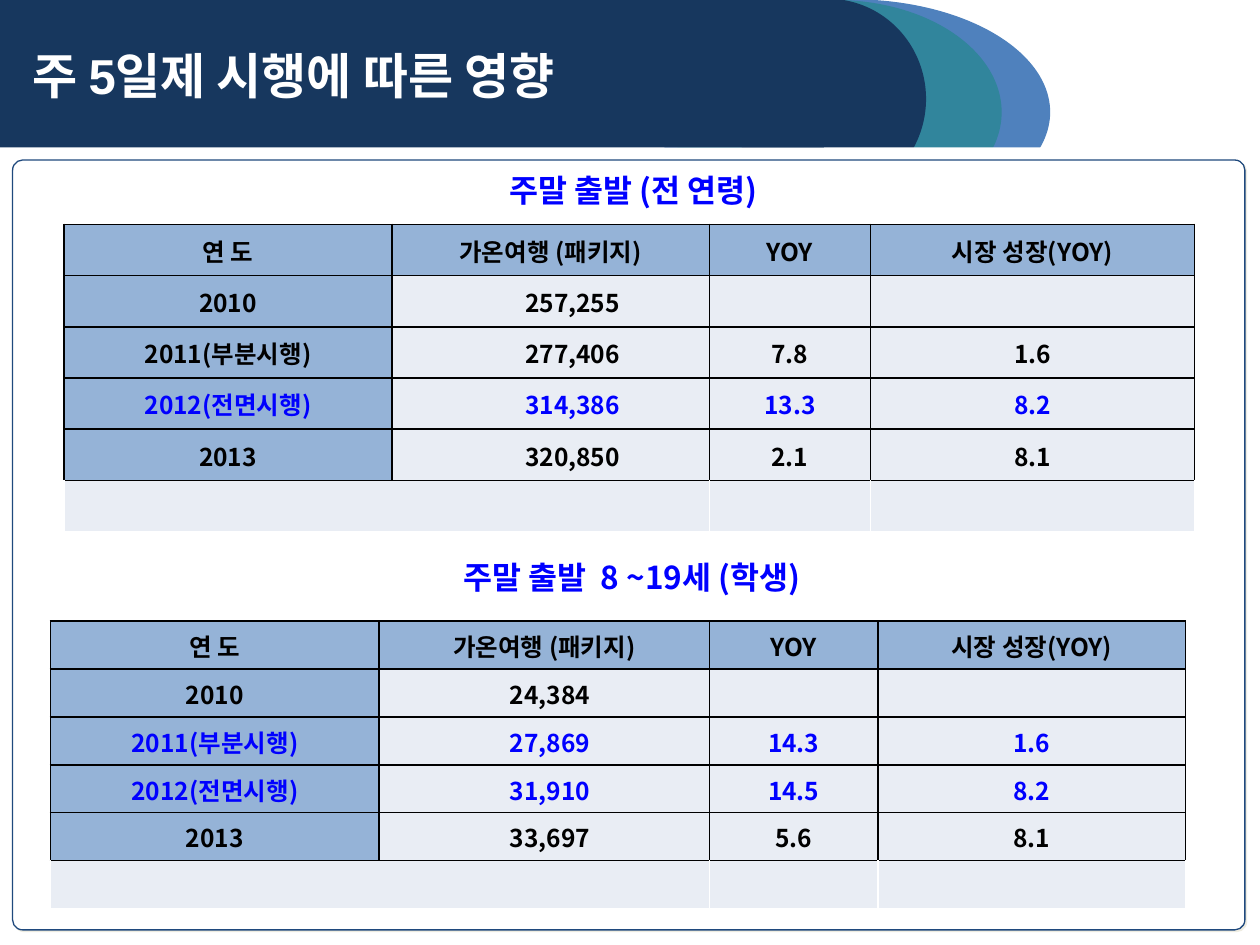
from dataclasses import dataclass

from lxml.etree import SubElement
from pptx import Presentation
from pptx.dml.color import RGBColor as RGB
from pptx.enum.shapes import MSO_SHAPE as Shape
from pptx.enum.text import MSO_ANCHOR as Anchor, PP_ALIGN as Align
from pptx.oxml.ns import qn
from pptx.util import Inches, Pt


@dataclass(frozen=True)
class Theme:
    navy: str = "17375E"
    teal: str = "31859C"
    blue: str = "4F81BD"
    outline: str = "1F497D"
    shade: str = "EEECE1"
    white: str = "FFFFFF"
    black: str = "000000"
    accent: str = "0000FF"
    label_fill: str = "95B3D7"
    value_fill: str = "E9EDF4"
    title_font: str = "Arial"
    body_font: str = "Noto Sans CJK KR"
    title_size: int = 28
    heading_size: int = 18
    table_size: int = 14


class SlideBuilder:
    """Places elements on a grid of 100 columns by 75 rows."""

    COLUMNS, ROWS = 100, 75

    def __init__(self, deck, theme):
        self.theme = theme
        self.unit = deck.slide_width / self.COLUMNS
        self.slide = deck.slides.add_slide(deck.slide_layouts[6])

    def grid(self, *lengths):
        return [round(length * self.unit) for length in lengths]

    def style(self, paragraph, size, color, font, align):
        paragraph.alignment = align
        paragraph.font.size = Pt(size)
        paragraph.font.bold = True
        paragraph.font.name = font
        paragraph.font.color.rgb = RGB.from_string(color)

    def shape(self, kind, area, fill, line=None):
        shape = self.slide.shapes.add_shape(kind, *self.grid(*area))
        shape.shadow.inherit = False
        shape.fill.solid()
        shape.fill.fore_color.rgb = RGB.from_string(fill)
        if line:
            shape.line.color.rgb = RGB.from_string(line)
            shape.line.width = Pt(0.75)
        else:
            shape.line.fill.background()
        return shape

    def panel(self, area):
        panel = self.shape(Shape.ROUNDED_RECTANGLE, area,
                           self.theme.white, self.theme.outline)
        panel.adjustments[0] = 0.013
        effects = panel.element.spPr.find(qn("a:effectLst"))
        shadow = SubElement(effects, qn("a:outerShdw"),
                            dist=str(Pt(1.4)), dir="2700000")
        SubElement(shadow, qn("a:srgbClr"), val=self.theme.shade)

    def text(self, area, words, size, color, font, align=Align.LEFT):
        frame = self.slide.shapes.add_textbox(*self.grid(*area)).text_frame
        frame.word_wrap = True
        frame.vertical_anchor = Anchor.MIDDLE
        frame.text = words
        self.style(frame.paragraphs[0], size, color, font, align)

    def heading(self, area, words, align=Align.LEFT):
        self.text(area, words, self.theme.heading_size, self.theme.accent,
                  self.theme.body_font, align)

    def borders(self, cell, **colors):
        properties = cell._tc.get_or_add_tcPr()
        for side in "LRTB":
            line = SubElement(properties, qn(f"a:ln{side}"), w=str(Pt(1)))
            fill = SubElement(line, qn("a:solidFill"))
            SubElement(fill, qn("a:srgbClr"),
                       val=colors.get(side, self.theme.black))

    def table(self, left, top, widths, row_height, records,
              highlighted, value_indent):
        theme = self.theme
        last = len(records)
        frame = self.slide.shapes.add_table(
            last + 1, len(widths),
            *self.grid(left, top, sum(widths), row_height * (last + 1)))
        table = frame.table
        for column, width in zip(table.columns, self.grid(*widths)):
            column.width = width
        blank_row = ("",) * len(widths)
        for r, record in enumerate([*records, blank_row]):
            color = theme.accent if r in highlighted else theme.black
            for c, words in enumerate(record):
                cell = table.cell(r, c)
                if r == last:
                    self.borders(cell, **dict.fromkeys("LRB", theme.white))
                else:
                    self.borders(cell)
                is_label = r == 0 or (c == 0 and r < last)
                cell.fill.solid()
                cell.fill.fore_color.rgb = RGB.from_string(
                    theme.label_fill if is_label else theme.value_fill)
                is_count = c == 1 and not is_label
                cell.margin_left = Inches(value_indent if is_count else 0.01)
                cell.margin_right = cell.margin_top = Inches(0.01)
                cell.margin_bottom = 0
                cell.vertical_anchor = Anchor.MIDDLE
                if words:
                    cell.text = words
                self.style(cell.text_frame.paragraphs[0], theme.table_size,
                           color, theme.body_font, Align.CENTER)
        table.cell(last, 0).merge(table.cell(last, 1))


HEADER = ("연 도", "가온여행 (패키지)", "YOY", "시장 성장(YOY)")
YEARS = ("2010", "2011(부분시행)", "2012(전면시행)", "2013")
MARKET_GROWTH = ("", "1.6", "8.2", "8.1")


def yearly_records(departures, growth):
    return [HEADER, *zip(YEARS, departures, growth, MARKET_GROWTH)]


def main():
    deck = Presentation()
    deck.slide_width, deck.slide_height = Inches(10), Inches(7.5)
    theme = Theme()
    page = SlideBuilder(deck, theme)

    # Title band: layered ellipses trimmed by a white strip
    page.shape(Shape.OVAL, (52, 0, 31.3, 17.8), theme.blue, theme.blue)
    page.shape(Shape.OVAL, (53.1, 0, 26.4, 17.8), theme.teal)
    page.shape(Shape.OVAL, (57.9, -0.1, 15.6, 15.9), theme.navy)
    page.shape(Shape.RECTANGLE, (0, 11.7, 100, 9.3), theme.white)
    page.shape(Shape.RECTANGLE, (0, 0, 65.4, 11.7), theme.navy)
    page.panel((1, 12.7, 97.8, 61.1))
    page.text((1.6, 3.1, 78.4, 5.7), "주 5일제 시행에 따른 영향",
              theme.title_size, theme.white, theme.title_font)

    # Weekend departures, all ages
    page.heading((35.8, 13.1, 29.5, 4), "주말 출발 (전 연령) ", Align.CENTER)
    all_ages = yearly_records(("257,255", "277,406", "314,386", "320,850"),
                              ("", "7.8", "13.3", "2.1"))
    page.table(5.1, 17.8, (26, 25.2, 12.8, 25.7), 4.07, all_ages,
               highlighted={3}, value_indent=0.36)

    # Weekend departures, students
    page.heading((35.8, 43.8, 35, 4), "주말 출발  8 ~19세 (학생)")
    students = yearly_records(("24,384", "27,869", "31,910", "33,697"),
                              ("", "14.3", "14.5", "5.6"))
    page.table(4, 49.3, (26.1, 26.2, 13.4, 24.4), 3.8, students,
               highlighted={2, 3}, value_indent=0.1)

    deck.save("out.pptx")


if __name__ == "__main__":
    main()
